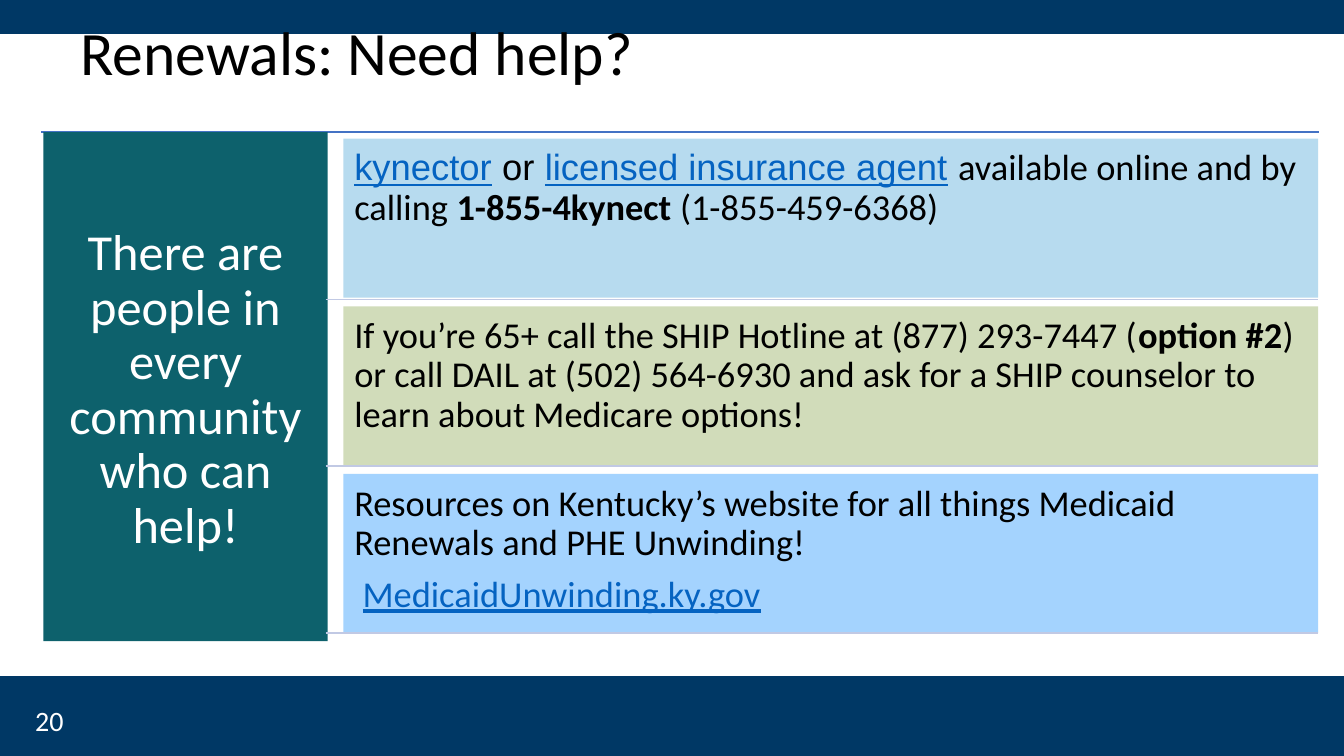
"""Build the slide on where to find help with renewals."""
from lxml import etree
from pptx import Presentation
from pptx import util as u
from pptx.dml import color
from pptx.enum import shapes, text
from pptx.oxml import ns

NAVY, TEAL, LINK, BLACK, WHITE = "003865", "0D616C", "0563C1", "000000", "FFFFFF"
BODY = {"size": 26}
STRONG = {"size": 26, "bold": True}
ANCHOR = {"size": 26, "underline": True, "color": LINK}

ROWS = [
    ("B7DBEF", [[
        ("kynector", ANCHOR | {"name": "Arial"}),
        (" or ", BODY | {"name": "Arial"}),
        ("licensed insurance agent", ANCHOR | {"name": "Arial"}),
        (" ", BODY | {"name": "Arial"}),
        ("available online and by calling ", BODY),
        ("1-855-4kynect", STRONG),
        (" (1-855-459-6368)", BODY),
    ]]),
    ("D1DCBA", [[
        ("If you’re 65+ call the SHIP Hotline at (877) 293-7447 (", BODY),
        ("option #2", STRONG),
        (") or call DAIL at (502) 564-6930 and ask for a SHIP counselor "
         "to learn about Medicare options!", BODY),
    ]]),
    ("A4D3FE", [
        [("Resources on Kentucky’s website for all things Medicaid Renewals "
          "and PHE Unwinding!", BODY)],
        [(" ", BODY), ("MedicaidUnwinding.ky.gov", ANCHOR)],
    ]),
]


def rgb(value):
    """Return the colour for a hex string."""
    return color.RGBColor.from_string(value)


def add_panel(page, left, top, width, height, fill):
    """Add a filled rectangle without an outline."""
    panel = page.shapes.add_shape(
        shapes.MSO_SHAPE.RECTANGLE, u.Pt(left), u.Pt(top), u.Pt(width), u.Pt(height))
    panel.shadow.inherit = False
    panel.fill.solid()
    panel.fill.fore_color.rgb = rgb(fill)
    panel.line.fill.background()
    return panel


def add_box(page, left, top, width, height):
    """Add an empty text box."""
    return page.shapes.add_textbox(u.Pt(left), u.Pt(top), u.Pt(width), u.Pt(height))


def write(box, paragraphs, insets=(7.2, 3.6, 7.2, 3.6), align="LEFT", spacing=0.9):
    """Fill a shape with paragraphs of formatted spans."""
    frame = box.text_frame
    layout = {"word_wrap": True, "vertical_anchor": text.MSO_ANCHOR.TOP}
    sides = ("margin_left", "margin_top", "margin_right", "margin_bottom")
    layout |= {side: u.Pt(inset) for side, inset in zip(sides, insets)}
    for key, value in layout.items():
        setattr(frame, key, value)
    for index, spans in enumerate(paragraphs):
        para = frame.add_paragraph() if index else frame.paragraphs[0]
        para.alignment = getattr(text.PP_ALIGN, align)
        para.line_spacing = spacing
        para.space_before = u.Pt(9 if index else 0)
        for words, style in spans:
            span = para.add_run()
            span.text = words
            look = {"name": "Calibri", "color": BLACK} | style
            span.font.color.rgb = rgb(look.pop("color"))
            look["size"] = u.Pt(look["size"])
            for key, value in look.items():
                setattr(span.font, key, value)


def add_rule(page, left, right, top, stroke):
    """Add a thin horizontal line."""
    rule = page.shapes.add_connector(
        shapes.MSO_CONNECTOR.STRAIGHT, u.Pt(left), u.Pt(top), u.Pt(right), u.Pt(top))
    rule.line.color.rgb = rgb(stroke)
    rule.line.width = u.Pt(1)
    etree.SubElement(rule._element.spPr, ns.qn("a:effectLst"))


def main():
    """Build and save the deck."""
    deck = Presentation()
    deck.slide_width, deck.slide_height = u.Pt(960), u.Pt(540)
    page = deck.slides.add_slide(deck.slide_layouts[6])

    add_panel(page, 0, 0, 960, 24.3, NAVY)
    add_panel(page, 0, 483, 960, 57, NAVY)
    write(add_box(page, 50.4, 12.2, 828, 104.4),
          [[("Renewals: Need help?", {"size": 44})]])
    write(add_box(page, 18, 499, 216, 28.8),
          [[("20", {"size": 20, "color": WHITE})]], spacing=1)

    add_rule(page, 29.5, 942.5, 94.3, "4472C4")
    side = add_panel(page, 31, 94.3, 203, 363.6, TEAL)
    message = "There are people in every community who can help!"
    write(side, [[(message, {"size": 36, "color": WHITE})]],
          insets=(10.8, 68, 10.8, 10.8), align="CENTER")

    for index, (fill, paragraphs) in enumerate(ROWS):
        row = add_panel(page, 245.3, 99 + 119.8 * index, 696.2, 113.6, fill)
        write(row, paragraphs, insets=(7.8,) * 4)
        add_rule(page, 232.6, 941.8, 213.8 + 119.2 * index, "C1C9E4")

    deck.save("out.pptx")


if __name__ == "__main__":
    main()
